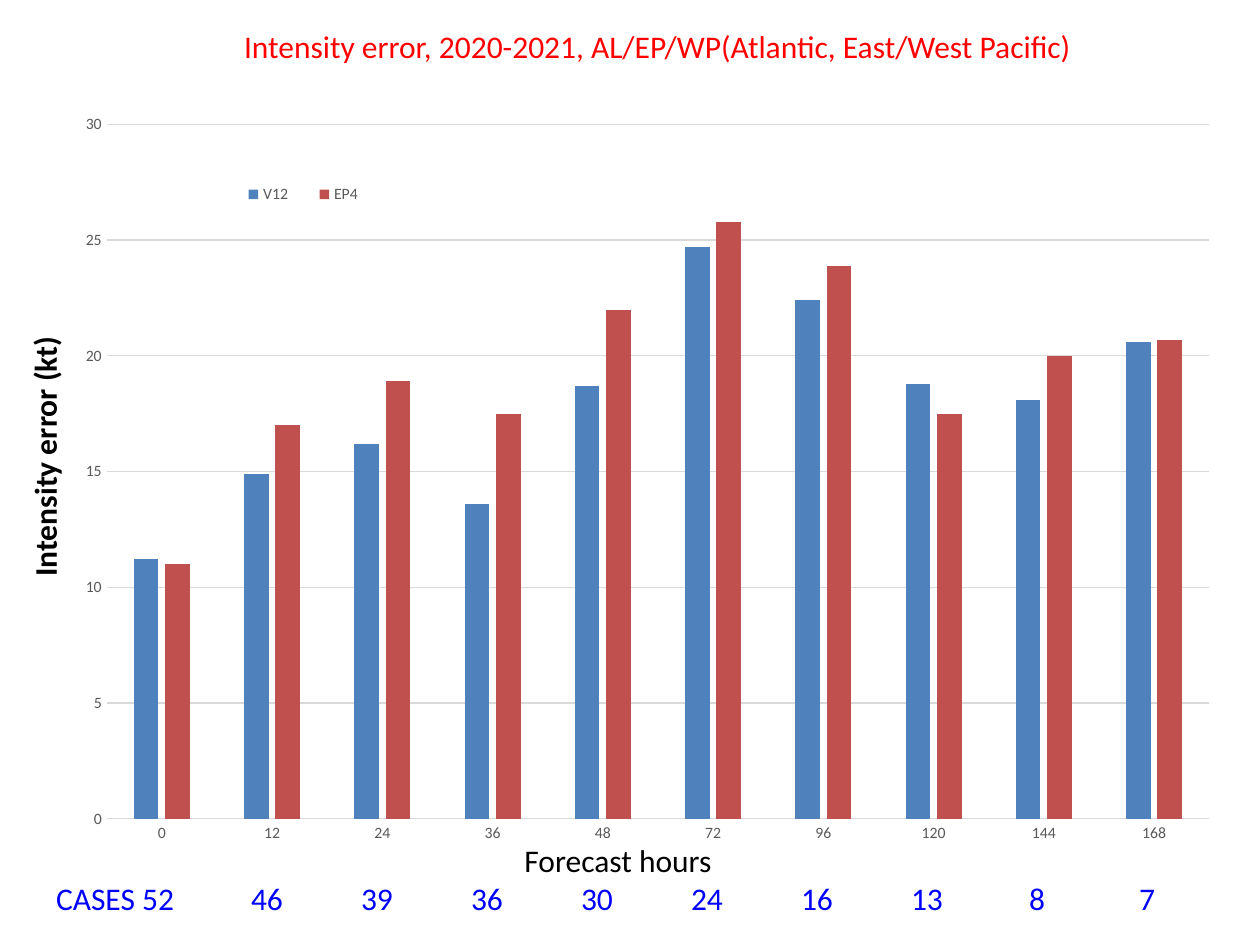
from lxml.etree import SubElement
from pptx import Presentation
from pptx.chart.data import CategoryChartData
from pptx.dml.color import RGBColor
from pptx.enum.chart import XL_CHART_TYPE, XL_LEGEND_POSITION, XL_TICK_MARK
from pptx.enum.text import MSO_ANCHOR, MSO_AUTO_SIZE, PP_ALIGN
from pptx.oxml.ns import qn
from pptx.util import Emu, Pt

COLUMNS = XL_CHART_TYPE.COLUMN_CLUSTERED
BOTTOM = XL_LEGEND_POSITION.BOTTOM
NO_TICK = XL_TICK_MARK.NONE
TOP = MSO_ANCHOR.TOP
NO_FIT = MSO_AUTO_SIZE.NONE
LEFT, CENTER = PP_ALIGN.LEFT, PP_ALIGN.CENTER

SCALE = 914400 / 126
FONT = "Calibri"
COLORS = {
    "title": "FF0000",
    "text": "000000",
    "cases": "0000FF",
    "labels": "595959",
    "grid": "D9D9D9",
    "V12": "4F81BD",
    "EP4": "C0504D",
}
HOURS = ["0", "12", "24", "36", "48", "72", "96", "120", "144", "168"]
ERRORS = {
    "V12": [11.2, 14.9, 16.2, 13.6, 18.7, 24.7, 22.4, 18.8, 18.1, 20.6],
    "EP4": [11, 17, 18.9, 17.5, 22, 25.8, 23.9, 17.5, 20, 20.7],
}
CASES = [52, 46, 39, 36, 30, 24, 16, 13, 8, 7]
FIRST_TAB, TAB_STEP = 211, 110


def px(length):
    """Turn px into EMU."""
    return Emu(round(length * SCALE))


def color(name):
    """Look up a colour by its role."""
    return RGBColor.from_string(COLORS[name])


def set_all(target, values):
    """Set every attribute named in values."""
    for name, value in values.items():
        setattr(target, name, value)


def style_font(font, size, color_name, bold=False):
    """Give a font its face, size, weight and colour."""
    set_all(font, {"name": FONT, "size": Pt(size), "bold": bold})
    font.color.rgb = color(color_name)


def set_frame(frame, wrap=True):
    """Anchor a text frame at the top with plain margins."""
    set_all(frame, {
        "word_wrap": wrap, "auto_size": NO_FIT, "vertical_anchor": TOP,
        "margin_left": px(13), "margin_right": px(13),
        "margin_top": px(6), "margin_bottom": px(6),
    })


def write(para, text, color_name, align=LEFT, bold=False):
    """Write one styled run into a paragraph."""
    para.alignment = align
    span = para.add_run()
    span.text = text
    style_font(span.font, 18, color_name, bold)


def add_title(page):
    """Fill the title placeholder."""
    title = page.shapes.title
    set_all(title, {"left": px(231), "top": px(21), "width": px(892), "height": px(50)})
    set_frame(title.text_frame)
    write(title.text_frame.paragraphs[0],
          "Intensity error, 2020-2021, AL/EP/WP(Atlantic, East/West Pacific)", "title")


def add_box(page, left, top, width, height, wrap=True):
    """Add an empty text box."""
    box = page.shapes.add_textbox(px(left), px(top), px(width), px(height))
    set_frame(box.text_frame, wrap)
    return box


def add_axis_caption(page):
    """Add the upright caption of the value axis."""
    box = add_box(page, -88, 430, 267, 52, wrap=False)
    box.rotation = 270
    write(box.text_frame.paragraphs[0], "Intensity error (kt)", "text", bold=True)


def add_tabs(para, count):
    """Put evenly spaced centred tab stops on a paragraph."""
    stops = SubElement(para._p.get_or_add_pPr(), qn("a:tabLst"))
    for index in range(count):
        position = px(FIRST_TAB + index * TAB_STEP)
        SubElement(stops, qn("a:tab"), pos=str(position), algn="ctr")


def add_case_counts(page):
    """Add the hours caption and the row of case counts."""
    frame = add_box(page, 43, 835, 1150, 90).text_frame
    write(frame.paragraphs[0], "Forecast hours", "text", CENTER)
    counts = frame.add_paragraph()
    write(counts, "CASES " + "\t".join(map(str, CASES)), "cases")
    add_tabs(counts, len(CASES) - 1)


def place(parent, index, x, y, w, h, inner=False):
    """Give a chart part a manual layout in fractions of the chart."""
    for old in parent.findall(qn("c:layout")):
        parent.remove(old)
    layout = SubElement(parent, qn("c:layout"))
    parent.insert(index, layout)
    manual = SubElement(layout, qn("c:manualLayout"))
    values = {"layoutTarget": "inner"} if inner else {}
    values.update(xMode="edge", yMode="edge", x=x, y=y, w=w, h=h)
    for name, value in values.items():
        SubElement(manual, qn("c:" + name), val=str(value))


def style_line(line):
    """Draw a thin grey line."""
    line.color.rgb = color("grid")
    line.width = Pt(0.75)


def style_axes(chart):
    """Format both axes and the grid."""
    hours, errors = chart.category_axis, chart.value_axis
    for axis in (hours, errors):
        set_all(axis, {"major_tick_mark": NO_TICK, "minor_tick_mark": NO_TICK})
        style_font(axis.tick_labels.font, 9, "labels")
    set_all(errors, {"minimum_scale": 0, "maximum_scale": 30,
                     "major_unit": 5, "has_major_gridlines": True})
    style_line(hours.format.line)
    style_line(errors.major_gridlines.format.line)
    errors.format.line.fill.background()


def add_error_chart(page):
    """Add the clustered columns of intensity error."""
    data = CategoryChartData()
    data.categories = HOURS
    for name, values in ERRORS.items():
        data.add_series(name, values)
    chart = page.shapes.add_chart(COLUMNS, px(72), px(105), px(1157), px(746), data).chart
    set_all(chart, {"has_title": False, "has_legend": True})
    style_font(chart.font, 10, "text")
    style_axes(chart)
    plot = chart.plots[0]
    set_all(plot, {"gap_width": 219, "overlap": -27, "vary_by_categories": False})
    for series in plot.series:
        series.format.fill.solid()
        series.format.fill.fore_color.rgb = color(series.name)
    legend = chart.legend
    set_all(legend, {"position": BOTTOM, "include_in_layout": False})
    style_font(legend.font, 9, "labels")
    place(legend._element, 1, 0.13, 0.1, 0.14, 0.04)
    place(chart._chartSpace.chart.plotArea, 0, 0.03, 0.026, 0.953, 0.931, inner=True)


def main():
    """Build and save the deck."""
    deck = Presentation()
    set_all(deck, {"slide_width": px(1260), "slide_height": px(945)})
    page = deck.slides.add_slide(deck.slide_layouts[5])
    add_title(page)
    add_axis_caption(page)
    add_case_counts(page)
    add_error_chart(page)
    deck.save("out.pptx")


if __name__ == "__main__":
    main()
